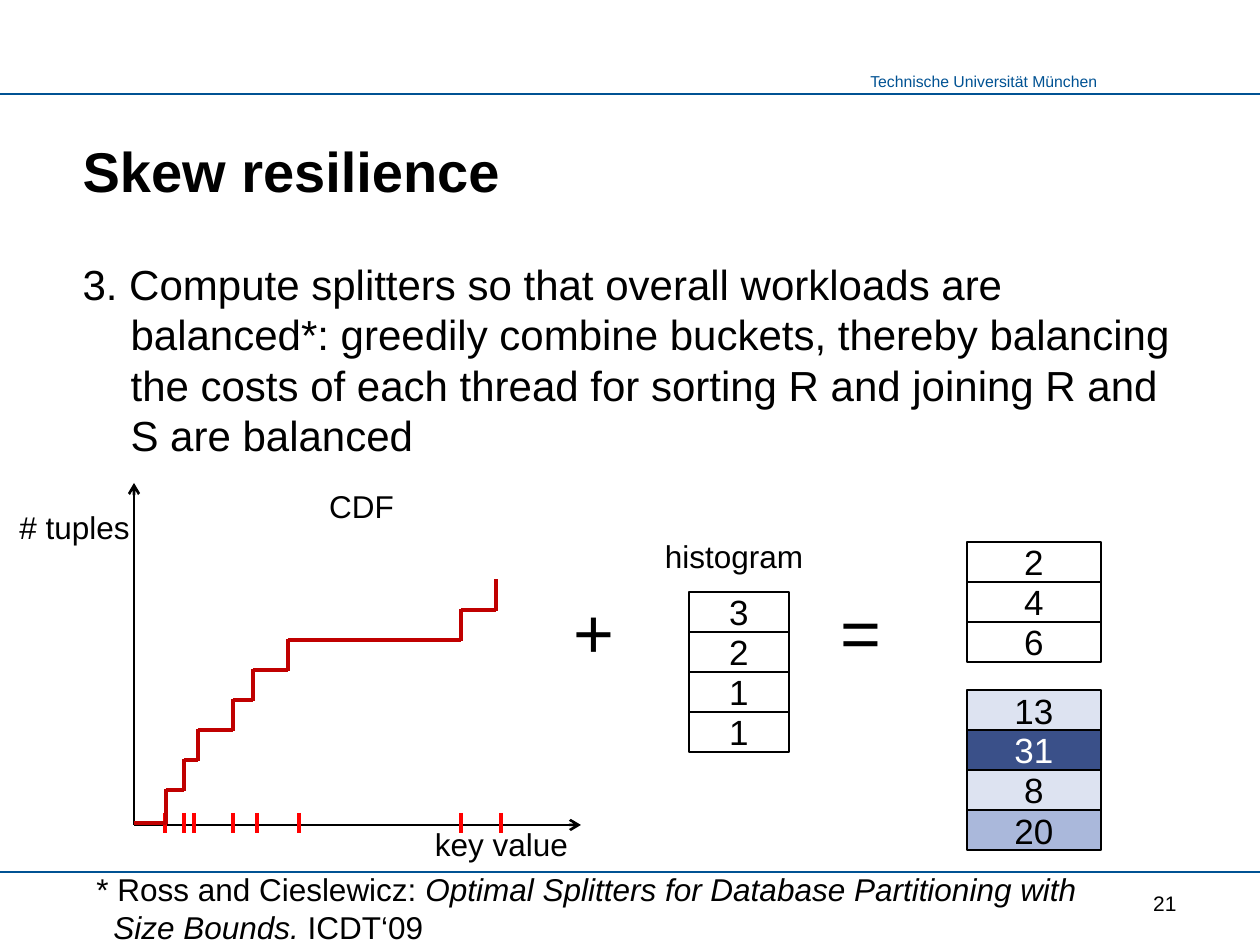
from lxml import etree
from pptx import Presentation
from pptx.dml.color import RGBColor
from pptx.enum.shapes import MSO_CONNECTOR, MSO_SHAPE
from pptx.enum.text import MSO_ANCHOR, PP_ALIGN
from pptx.oxml.ns import qn
from pptx.util import Emu, Pt

LEFT, CENTER, RIGHT = PP_ALIGN.LEFT, PP_ALIGN.CENTER, PP_ALIGN.RIGHT
TOP, MIDDLE, BOTTOM = MSO_ANCHOR.TOP, MSO_ANCHOR.MIDDLE, MSO_ANCHOR.BOTTOM
STRAIGHT, RECT = MSO_CONNECTOR.STRAIGHT, MSO_SHAPE.RECTANGLE

FONT = "Arial"
PX_PER_INCH = 126
COLORS = {
    "black": "000000", "white": "FFFFFF", "blue": "005293",
    "splitter": "FF0000", "cdf": "C00000",
    "light": "DDE3F1", "medium": "AAB8DB", "dark": "3A5089",
}


def px(n):
    return Emu(round(n * 914400 / PX_PER_INCH))


def rgb(name):
    return RGBColor.from_string(COLORS[name])


class SlideBuilder:
    def __init__(self, slide):
        self.slide = slide

    def style(self, tf, size, color="black", bold=False, align=LEFT, anchor=TOP):
        tf.vertical_anchor = anchor
        for p in tf.paragraphs:
            p.alignment = align
            for r in p.runs:
                r.font.name = FONT
                r.font.size = Pt(size)
                r.font.bold = bold
                r.font.color.rgb = rgb(color)

    def hang(self, p, indent):
        pPr = p._p.get_or_add_pPr()
        pPr.set("marL", str(px(indent)))
        pPr.set("indent", str(-px(indent)))
        etree.SubElement(pPr, qn("a:buNone"))

    def placeholder(self, idx, text, box, size, indent=0, **style):
        sp = self.slide.placeholders[idx]
        sp.left, sp.top, sp.width, sp.height = map(px, box)
        tf = sp.text_frame
        tf.text = text
        if indent:
            self.hang(tf.paragraphs[0], indent)
        tf.paragraphs[0].space_before = Pt(0)
        self.style(tf, size, **style)

    def text(self, parts, box, size, wrap=True, indent=0, **style):
        tf = self.slide.shapes.add_textbox(*map(px, box)).text_frame
        tf.word_wrap = wrap
        p = tf.paragraphs[0]
        if indent:
            self.hang(p, indent)
        for part, italic in parts:
            r = p.add_run()
            r.text = part
            r.font.italic = italic
        self.style(tf, size, **style)

    def label(self, text, box, size=18, align=CENTER, **style):
        self.text([(text, False)], box, size, align=align, **style)

    def line(self, x1, y1, x2, y2, color="black", width=1.5, arrow=False):
        c = self.slide.shapes.add_connector(STRAIGHT, *map(px, (x1, y1, x2, y2)))
        c.line.color.rgb = rgb(color)
        c.line.width = Pt(width)
        if arrow:
            etree.SubElement(c.line._get_or_add_ln(), qn("a:tailEnd"), type="arrow")
        etree.SubElement(c._element.spPr, qn("a:effectLst"))

    def cell(self, text, box, fill, color):
        sp = self.slide.shapes.add_shape(RECT, *map(px, box))
        sp.shadow.inherit = False
        sp.fill.solid()
        sp.fill.fore_color.rgb = rgb(fill)
        sp.line.color.rgb = rgb("black")
        sp.line.width = Pt(1.5)
        tf = sp.text_frame
        tf.margin_top = tf.margin_bottom = 0
        tf.text = text
        self.style(tf, 20, color, align=CENTER, anchor=MIDDLE)

    def stack(self, cells, x, y, w, h=40):
        for i, (text, fill) in enumerate(cells):
            color = "white" if fill == "dark" else "black"
            self.cell(text, (x, y + i * h, w, h), fill, color)


def main():
    prs = Presentation()
    prs.slide_width, prs.slide_height = px(1260), px(945)
    s = SlideBuilder(prs.slides.add_slide(prs.slide_layouts[1]))

    s.label("Technische Universität München", (858, 66, 253, 32), 9,
            align=LEFT, wrap=False, color="blue")
    for y in (872, 94):
        s.line(0, y, 1260, y, "blue", 0.75)

    s.placeholder(0, "Skew resilience", (70, 126, 1120, 84), 32,
                  bold=True, anchor=BOTTOM)
    s.placeholder(1, "3. Compute splitters so that overall workloads are balanced*: "
                  "greedily combine buckets, thereby balancing the costs of each "
                  "thread for sorting R and joining R and S are balanced",
                  (70, 252, 1120, 598), 24, indent=48)

    s.line(134, 825, 581, 825, arrow=True)
    s.line(134, 825, 134, 483, arrow=True)
    s.label("# tuples", (-5, 502, 159, 50))
    s.label("key value", (422, 819, 159, 50))
    s.label("CDF", (282, 481, 159, 50))

    for x in (165, 184, 194, 233, 257, 299, 461, 501):
        s.line(x, 813, x, 833, "splitter", 2.5)

    step_xs = (134, 166, 184, 198, 233, 253, 288, 461, 496)
    step_ys = [823] + [790 - 30 * i for i in range(8)]
    for i in range(8):
        x1, x2 = step_xs[i:i + 2]
        y1, y2 = step_ys[i:i + 2]
        s.line(x1, y1, x2, y1, "cdf", 2)
        s.line(x2, y1 + 1, x2, y2 - 1, "cdf", 2)

    s.label("histogram", (630, 531, 208, 50))
    s.stack([(n, "white") for n in "3211"], 689, 592, 100)
    s.label("+", (561, 582, 79, 97), 40, align=LEFT)
    s.label("=", (828, 582, 79, 97), 40, align=LEFT)
    s.stack([(n, "white") for n in "246"], 967, 542, 134)
    s.stack([("13", "light"), ("31", "dark"), ("8", "light"), ("20", "medium")],
            967, 690, 134)

    s.label("21", (927, 882, 262, 42), 12, align=RIGHT, anchor=MIDDLE)
    s.text([("* Ross and Cieslewicz: ", False),
            ("Optimal Splitters for Database Partitioning with Size Bounds. ", True),
            ("ICDT‘09", False)], (84, 864, 1032, 89), 18, indent=17)

    prs.save("out.pptx")


if __name__ == "__main__":
    main()
